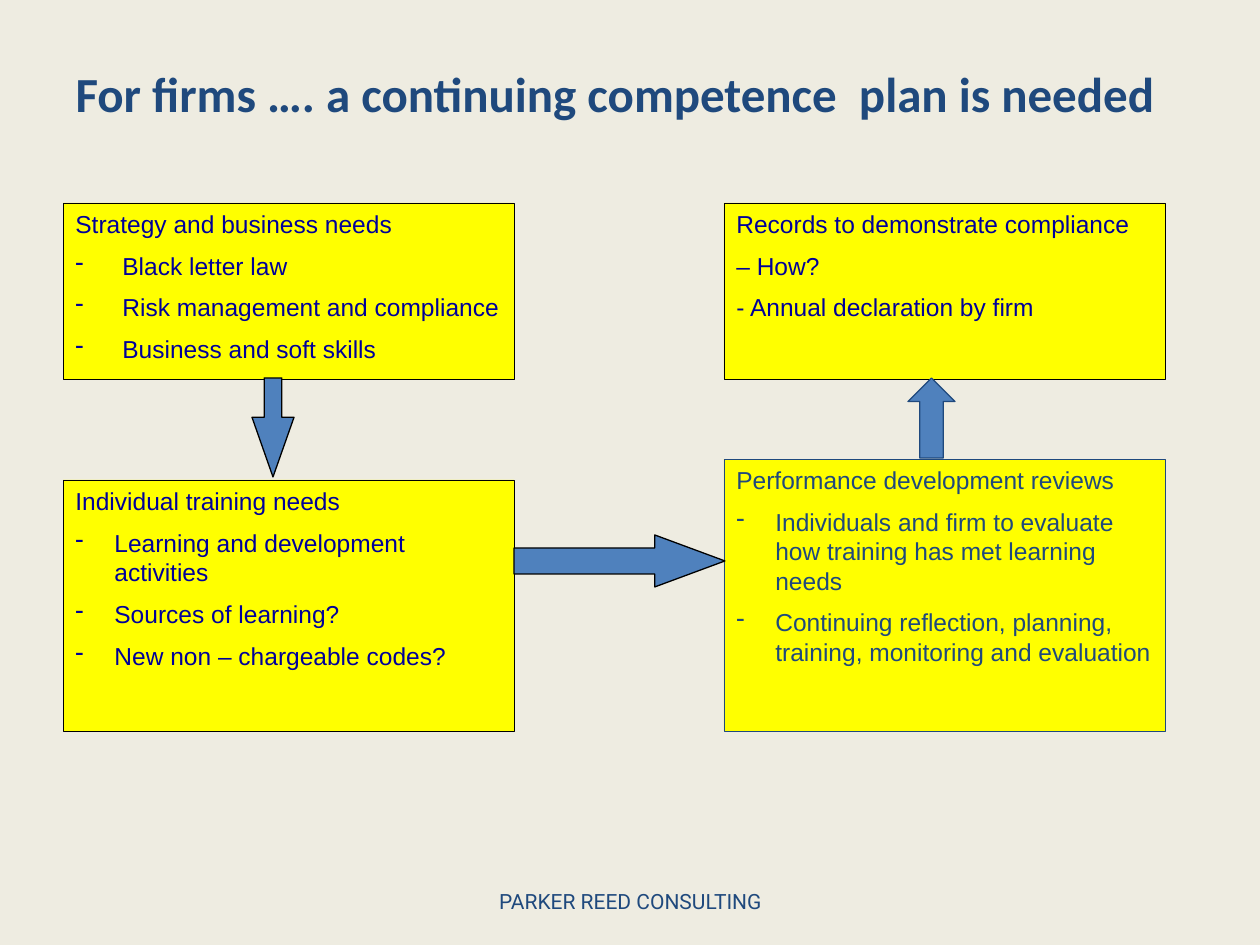
"""Builds the competence plan slide: four boxes joined by block arrows."""
from lxml import etree
from pptx import Presentation
from pptx.dml.color import RGBColor
from pptx.enum import shapes, text
from pptx.oxml import ns
from pptx.util import Pt

PX = 914400 // 126
CREAM = RGBColor(0xEE, 0xEC, 0xE1)
YELLOW = RGBColor(0xFF, 0xFF, 0x00)
BLUE = RGBColor(0x4F, 0x81, 0xBD)
NAVY = RGBColor(0x1F, 0x49, 0x7D)
INK = RGBColor(0x00, 0x00, 0x99)
BLACK = RGBColor(0x00, 0x00, 0x00)
KIND = shapes.MSO_SHAPE


class Deck:
    def __init__(self):
        self.prs = Presentation()
        self.prs.slide_width, self.prs.slide_height = 1260 * PX, 945 * PX
        self.slide = self.prs.slides.add_slide(self.prs.slide_layouts[5])
        fill = self.slide.background.fill
        fill.solid()
        fill.fore_color.rgb = CREAM

    def label(self, para, words, size, font, color, bold=False):
        run = para.add_run()
        run.text = words
        run.font.size, run.font.name, run.font.bold = Pt(size), font, bold
        run.font.color.rgb = color

    def title(self, words, x, y, w, h):
        head = self.slide.shapes.title
        head.left, head.top, head.width, head.height = [n * PX for n in (x, y, w, h)]
        frame = head.text_frame
        frame.auto_size = text.MSO_AUTO_SIZE.NONE
        frame.vertical_anchor = text.MSO_ANCHOR.MIDDLE
        frame.paragraphs[0].alignment = text.PP_ALIGN.LEFT
        self.label(frame.paragraphs[0], words, 28, "Calibri", NAVY, True)

    def foot(self, words, x, y, w, h):
        frame = self.slide.shapes.add_textbox(*[n * PX for n in (x, y, w, h)]).text_frame
        frame.word_wrap = True
        frame.vertical_anchor = text.MSO_ANCHOR.MIDDLE
        frame.paragraphs[0].alignment = text.PP_ALIGN.CENTER
        self.label(frame.paragraphs[0], words, 12, "Roboto", NAVY)

    def shape(self, kind, x, y, w, h, fill, line, width):
        item = self.slide.shapes.add_shape(kind, *[n * PX for n in (x, y, w, h)])
        item.shadow.inherit = False
        item.fill.solid()
        item.fill.fore_color.rgb = fill
        item.line.color.rgb = line
        item.line.width = Pt(width)
        return item

    def arrow(self, kind, x, y, w, h, line, ratios=()):
        item = self.shape(kind, x, y, w, h, BLUE, line, 0.75)
        for i, ratio in enumerate(ratios):
            item.adjustments[i] = ratio

    def box(self, x, y, w, h, lines, indent=0, line=BLACK, color=INK):
        frame = self.shape(KIND.RECTANGLE, x, y, w, h, YELLOW, line, 0.25).text_frame
        frame.word_wrap = True
        frame.vertical_anchor = text.MSO_ANCHOR.TOP
        for i, words in enumerate(lines):
            para = frame.add_paragraph() if i else frame.paragraphs[0]
            para.alignment = text.PP_ALIGN.LEFT
            if i:
                para.space_before = Pt(7)
            if i and indent:
                self.dash(para, indent)
            self.label(para, words, 14, "Arial", color)

    def dash(self, para, indent):
        props = para._p.get_or_add_pPr()
        props.set("marL", str(indent * PX))
        props.set("indent", str(-indent * PX))
        etree.SubElement(props, ns.qn("a:buChar")).set("char", "-")


def main():
    deck = Deck()
    deck.title("For firms …. a continuing competence  plan is needed", 63, 38, 1134, 110)
    deck.foot("PARKER REED CONSULTING", 431, 876, 399, 50)
    deck.box(63, 203, 451, 176, [
        "Strategy and business needs",
        "Black letter law",
        "Risk management and compliance",
        "Business and soft skills",
    ], 47)
    deck.box(724, 203, 441, 176, [
        "Records to demonstrate compliance",
        "– How?",
        "- Annual declaration by firm",
    ])
    deck.box(63, 480, 451, 251, [
        "Individual training needs",
        "Learning and development activities",
        "Sources of learning?",
        "New non – chargeable codes?",
    ], 39)
    deck.box(724, 459, 441, 272, [
        "Performance development reviews",
        "Individuals and firm to evaluate how training has met learning needs",
        "Continuing reflection, planning, training, monitoring and evaluation",
    ], 39, NAVY, NAVY)
    deck.arrow(KIND.UP_ARROW, 908, 378, 47, 80, NAVY)
    deck.arrow(KIND.RIGHT_ARROW, 514, 535, 211, 52, BLACK, (0.5, 1.35))
    deck.arrow(KIND.DOWN_ARROW, 252, 378, 42, 99, BLACK, (0.42, 1.42))
    deck.prs.save("out.pptx")


if __name__ == "__main__":
    main()
